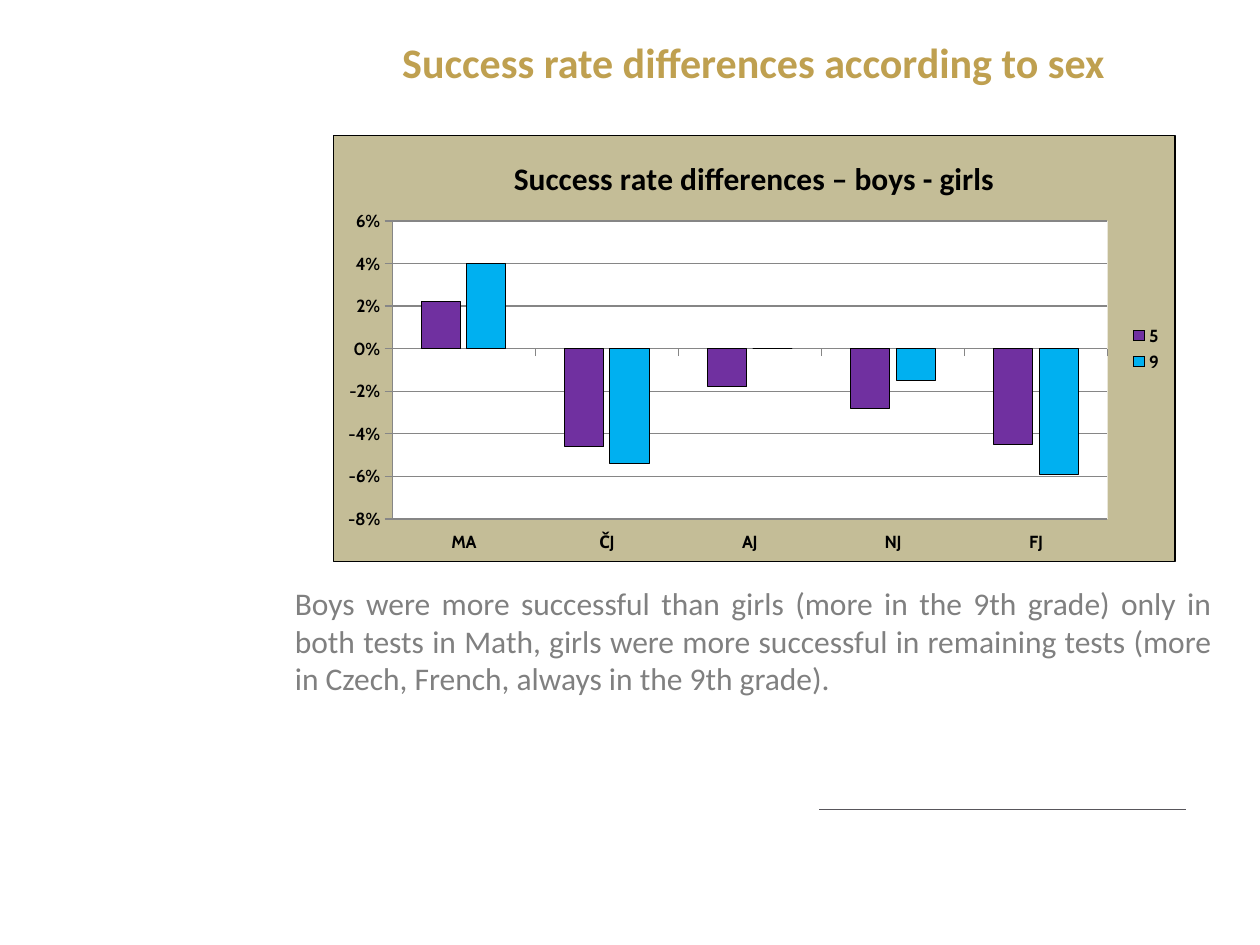
from lxml import etree
from pptx import Presentation
from pptx.chart.data import CategoryChartData
from pptx.dml.color import RGBColor
from pptx.enum.chart import XL_CHART_TYPE, XL_LEGEND_POSITION, XL_TICK_LABEL_POSITION, XL_TICK_MARK
from pptx.enum.shapes import MSO_CONNECTOR
from pptx.enum.text import MSO_ANCHOR, PP_ALIGN
from pptx.oxml import parse_xml
from pptx.oxml.ns import nsdecls, qn
from pptx.util import Inches, Pt

COLUMN = XL_CHART_TYPE.COLUMN_CLUSTERED
RIGHT = XL_LEGEND_POSITION.RIGHT
LOW = XL_TICK_LABEL_POSITION.LOW
OUTSIDE = XL_TICK_MARK.OUTSIDE
STRAIGHT = MSO_CONNECTOR.STRAIGHT
MIDDLE, TOP = MSO_ANCHOR.MIDDLE, MSO_ANCHOR.TOP
CENTER, JUSTIFY = PP_ALIGN.CENTER, PP_ALIGN.JUSTIFY

WIDE, HIGH = Inches(10), Inches(7.5)
COLORS = {
    "gold": "BFA050", "text": "808080", "rule": "58565B", "black": "000000",
    "sand": "C4BD97", "white": "FFFFFF", "grid": "868686",
    "grade5": "7030A0", "grade9": "00B0F0",
}
SUBJECTS = ["MA", "ČJ", "AJ", "NJ", "FJ"]
GRADES = [
    ("5", "grade5", [0.022, -0.046, -0.018, -0.028, -0.045]),
    ("9", "grade9", [0.04, -0.054, 0, -0.015, -0.059]),
]


def color(name):
    return RGBColor.from_string(COLORS[name])


def share(left, top, width, height):
    return int(WIDE * left), int(HIGH * top), int(WIDE * width), int(HIGH * height)


def set_font(font, face, size, name, bold=False):
    font.name, font.size, font.bold = face, Pt(size), bold
    font.color.rgb = color(name)


def add_text(holder, box, text, align, anchor, size, name, bold=False):
    holder.left, holder.top, holder.width, holder.height = box
    frame = holder.text_frame
    frame.word_wrap = True
    frame.vertical_anchor = anchor
    frame.text = text
    para = frame.paragraphs[0]
    props = para._p.get_or_add_pPr()
    props.set("marL", "0")
    props.set("indent", "0")
    etree.SubElement(props, qn("a:buNone"))
    para.alignment = align
    para.space_before = Pt(0)
    set_font(para.font, "Calibri", size, name, bold)


def area(fill, line=None):
    edge = "<a:noFill/>"
    if line:
        edge = f'<a:solidFill><a:srgbClr val="{COLORS[line]}"/></a:solidFill>'
    return parse_xml(
        f'<c:spPr {nsdecls("c", "a")}><a:solidFill><a:srgbClr val="{COLORS[fill]}"/>'
        f'</a:solidFill><a:ln w="9525">{edge}</a:ln></c:spPr>')


def set_plot(chart, left, top, width, height):
    plot = chart._chartSpace.chart.plotArea
    for old in plot.findall(qn("c:layout")):
        plot.remove(old)
    plot.insert(0, parse_xml(
        f'<c:layout {nsdecls("c")}><c:manualLayout><c:layoutTarget val="inner"/>'
        f'<c:xMode val="edge"/><c:yMode val="edge"/><c:x val="{left}"/><c:y val="{top}"/>'
        f'<c:w val="{width}"/><c:h val="{height}"/></c:manualLayout></c:layout>'))
    plot.append(area("white"))


def add_chart(slide, box):
    data = CategoryChartData(number_format="0%")
    data.categories = SUBJECTS
    for grade, _, values in GRADES:
        data.add_series(grade, values)
    chart = slide.shapes.add_chart(COLUMN, *box, data).chart
    set_font(chart.font, "Calibri", 10, "black")
    chart.has_title = True
    title = chart.chart_title
    title.include_in_layout = False
    title.text_frame.text = "Success rate differences – boys - girls"
    set_font(title.text_frame.paragraphs[0].font, "Calibri", 18, "black", True)
    chart.has_legend = True
    chart.legend.position = RIGHT
    chart.legend.include_in_layout = False
    set_font(chart.legend.font, "Cabin", 10, "black", True)

    for axis in (chart.category_axis, chart.value_axis):
        set_font(axis.tick_labels.font, "Cabin", 10, "black", True)
        axis.major_tick_mark = OUTSIDE
        axis.format.line.color.rgb = color("grid")
    chart.category_axis.tick_label_position = LOW
    scale = chart.value_axis
    scale.minimum_scale, scale.maximum_scale, scale.major_unit = -0.08, 0.06, 0.02
    scale.tick_labels.number_format = "0%"
    scale.tick_labels.number_format_is_linked = False
    scale.major_gridlines.format.line.color.rgb = color("grid")

    plot = chart.plots[0]
    plot.gap_width, plot.overlap = 150, -16
    plot.vary_by_categories = False
    for series, (_, name, _) in zip(plot.series, GRADES):
        series.invert_if_negative = False
        series.format.fill.solid()
        series.format.fill.fore_color.rgb = color(name)
        series.format.line.color.rgb = color("black")
        series.format.line.width = Pt(0.5)
    set_plot(chart, 0.07, 0.2, 0.85, 0.7)
    chart._chartSpace.chart.addnext(area("sand", "black"))


def add_rule(slide, box):
    left, top, width, _ = box
    rule = slide.shapes.add_connector(STRAIGHT, left + width, top, left, top)
    rule.line.color.rgb = color("rule")
    rule.line.width = Pt(0.75)
    etree.SubElement(rule._element.spPr, qn("a:effectLst"))


def main():
    deck = Presentation()
    deck.slide_width, deck.slide_height = WIDE, HIGH
    slide = deck.slides.add_slide(deck.slide_layouts[1])
    title, body = slide.placeholders
    add_rule(slide, share(0.65, 0.857, 0.291, 0))
    add_text(title, share(0.224, 0.007, 0.748, 0.116),
             "Success rate differences according to sex",
             CENTER, MIDDLE, 24, "gold", True)
    add_text(body, share(0.224, 0.611, 0.748, 0.236),
             "Boys were more successful than girls (more in the 9th grade) only in "
             "both tests in Math, girls were more successful in remaining tests "
             "(more in Czech, French, always in the 9th grade).",
             JUSTIFY, TOP, 18, "text")
    add_chart(slide, share(0.264, 0.143, 0.669, 0.452))
    deck.save("out.pptx")


if __name__ == "__main__":
    main()
